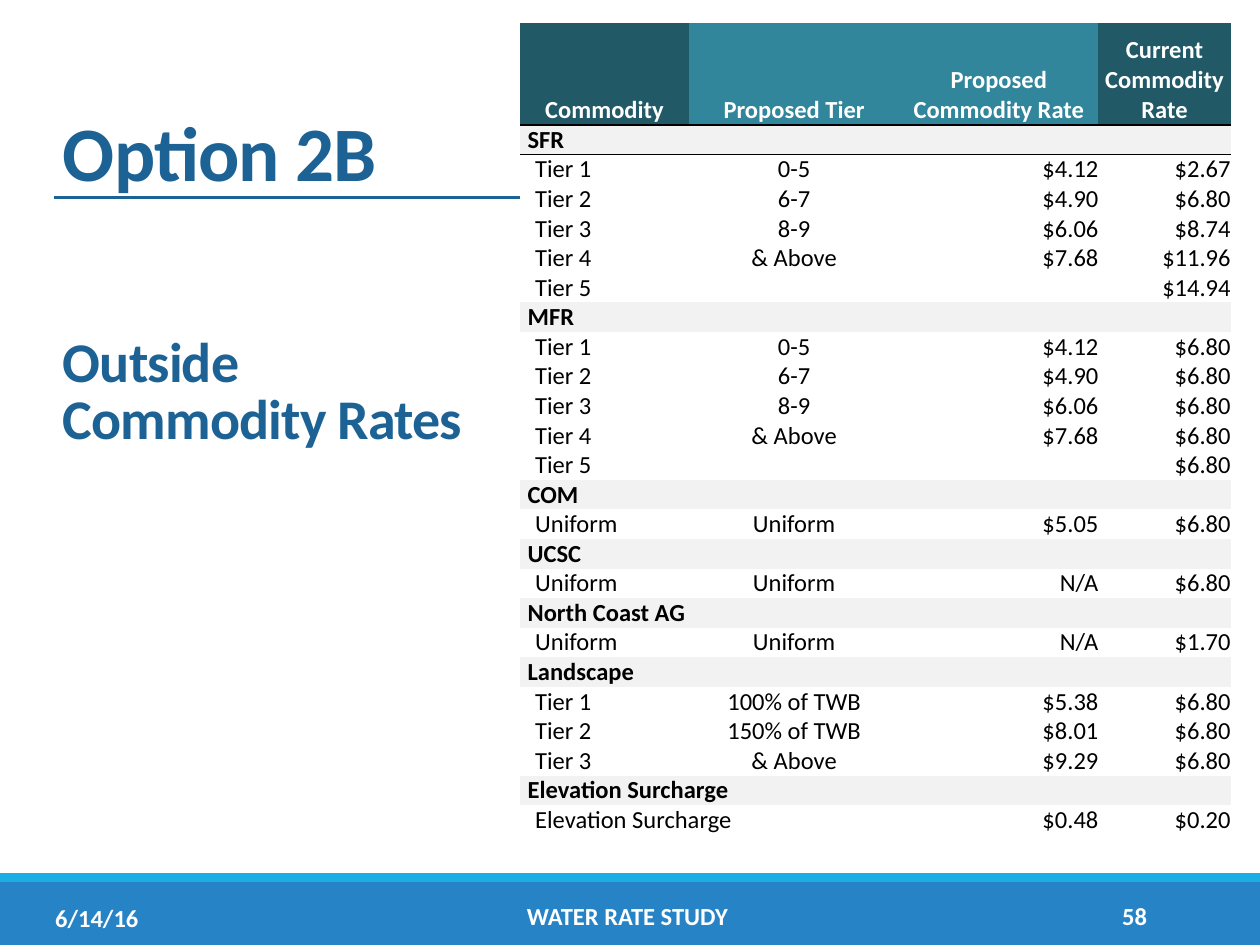
from lxml import etree
from pptx import Presentation
from pptx.dml.color import RGBColor
from pptx.enum.shapes import MSO_CONNECTOR, MSO_SHAPE
from pptx.enum.text import MSO_ANCHOR, PP_ALIGN
from pptx.oxml.ns import qn
from pptx.util import Pt

LEFT, MID, RIGHT = PP_ALIGN.LEFT, PP_ALIGN.CENTER, PP_ALIGN.RIGHT
LOW, CENTER = MSO_ANCHOR.BOTTOM, MSO_ANCHOR.MIDDLE
RECT, LINE = MSO_SHAPE.RECTANGLE, MSO_CONNECTOR.STRAIGHT
PLAIN = "{2D5ABB26-0587-4C30-8999-92F81FD0307C}"

COLORS = {
    "navy": "1D6294", "blue": "2683C6", "sky": "1CADE4",
    "deep": "215967", "teal": "31869B", "gray": "F2F2F2",
    "white": "FFFFFF", "black": "000000",
}
BARS = [(504, 36, "blue"), (499, 5, "sky")]
TITLE = [("Option 2B", 44, 0), ("Outside Commodity Rates", 32, 80)]
FOOTER = [
    ("6/14/16", 24.5, 509.8, 80, LEFT),
    ("WATER RATE STUDY", 104.5, 508.6, 508, MID),
    ("58", 612.5, 508.6, 50, RIGHT),
]
HEAD = [
    ("Commodity", "deep"), ("Proposed Tier", "teal"),
    ("Proposed Commodity Rate", "teal"), ("Current Commodity Rate", "deep"),
]
GROUPS = [
    ("SFR", [
        ("Tier 1", "0-5", "$4.12", "$2.67"),
        ("Tier 2", "6-7", "$4.90", "$6.80"),
        ("Tier 3", "8-9", "$6.06", "$8.74"),
        ("Tier 4", "& Above", "$7.68", "$11.96"),
        ("Tier 5", "", "", "$14.94"),
    ]),
    ("MFR", [
        ("Tier 1", "0-5", "$4.12", "$6.80"),
        ("Tier 2", "6-7", "$4.90", "$6.80"),
        ("Tier 3", "8-9", "$6.06", "$6.80"),
        ("Tier 4", "& Above", "$7.68", "$6.80"),
        ("Tier 5", "", "", "$6.80"),
    ]),
    ("COM", [("Uniform", "Uniform", "$5.05", "$6.80")]),
    ("UCSC", [("Uniform", "Uniform", "N/A", "$6.80")]),
    ("North Coast AG", [("Uniform", "Uniform", "N/A", "$1.70")]),
    ("Landscape", [
        ("Tier 1", "100% of TWB", "$5.38", "$6.80"),
        ("Tier 2", "150% of TWB", "$8.01", "$6.80"),
        ("Tier 3", "& Above", "$9.29", "$6.80"),
    ]),
    ("Elevation Surcharge", [("Elevation Surcharge", "", "$0.48", "$0.20")]),
]
MERGED = {"North Coast AG", "Elevation Surcharge"}
WIDTHS = [96.5, 120.2, 113.8, 75.6]
ALIGNS = [LEFT, MID, RIGHT, RIGHT]
TOP, ROW = 58.3, 16.92


def rgb(name):
    return RGBColor.from_string(COLORS[name])


def paint(item, name):
    item.fill.solid()
    item.fill.fore_color.rgb = rgb(name)


def assign(item, values):
    for key, value in values.items():
        setattr(item, key, value)


def write(para, text, color, size=14, bold=True):
    run = para.add_run()
    run.text = text
    assign(run.font, {"name": "Calibri", "size": Pt(size), "bold": bold})
    run.font.color.rgb = rgb(color)
    return run


def add_box(slide, area, anchor):
    frame = slide.shapes.add_textbox(*map(Pt, area)).text_frame
    assign(frame, {"word_wrap": True, "vertical_anchor": anchor})
    return frame


def add_base(slide):
    for top, height, color in BARS:
        bar = slide.shapes.add_shape(RECT, 0, Pt(top), Pt(720), Pt(height))
        bar.shadow.inherit = False
        paint(bar, color)
        bar.line.fill.background()
    rule = slide.shapes.add_connector(LINE, Pt(31), Pt(113), Pt(688), Pt(113))
    rule.line.color.rgb = rgb("navy")
    rule.line.width = Pt(1.5)
    etree.SubElement(rule._element.spPr, qn("a:effectLst"))


def add_title(slide):
    frame = add_box(slide, (28.8, 28.8, 246.2, 232.6), LOW)
    for i, (text, size, gap) in enumerate(TITLE):
        para = frame.add_paragraph() if i else frame.paragraphs[0]
        assign(para, {"line_spacing": 0.85, "space_before": Pt(gap)})
        run = write(para, text, "navy", size)
        run.font._element.set("spc", "-50")


def add_footer(slide):
    for text, left, top, width, align in FOOTER:
        para = add_box(slide, (left, top, width, 28.8), CENTER).paragraphs[0]
        para.alignment = align
        write(para, text, "white")


def add_edge(cell, side):
    edge = etree.Element(qn("a:" + side), w="12700")
    fill = etree.SubElement(edge, qn("a:solidFill"))
    etree.SubElement(fill, qn("a:srgbClr"), val=COLORS["black"])
    cell._tc.get_or_add_tcPr().insert(0, edge)


def fill_cell(cell, text, back, color, align, bold, inset):
    assign(cell, {
        "margin_left": Pt(inset), "margin_right": 0, "margin_top": 0,
        "margin_bottom": 0, "vertical_anchor": LOW,
    })
    paint(cell, back)
    para = cell.text_frame.paragraphs[0]
    para.alignment = align
    if text:
        write(para, text, color, bold=bold)
    else:
        etree.SubElement(para._p, qn("a:endParaRPr"), sz="1400")


def add_rates(slide):
    rows = []
    for name, tiers in GROUPS:
        rows.append(((name, "", "", ""), True))
        rows += [(tier, False) for tier in tiers]
    high = TOP + ROW * len(rows)
    area = map(Pt, (297.2, 13.2, sum(WIDTHS), high))
    table = slide.shapes.add_table(len(rows) + 1, len(WIDTHS), *area).table
    assign(table, {"first_row": False, "horz_banding": False})
    table._tbl.tblPr.find(qn("a:tableStyleId")).text = PLAIN
    for col, width in zip(table.columns, WIDTHS):
        col.width = Pt(width)
    for i, row in enumerate(table.rows):
        row.height = Pt(ROW if i else TOP)
    for c, (text, back) in enumerate(HEAD):
        fill_cell(table.cell(0, c), text, back, "white", MID, True, 0)
        add_edge(table.cell(0, c), "lnB")
        add_edge(table.cell(1, c), "lnT")
    for r, (texts, group) in enumerate(rows, 1):
        back = "gray" if group else "white"
        pad = 4.3 if group else 8.6
        for c, text in enumerate(texts):
            inset = 0 if c else pad
            fill_cell(table.cell(r, c), text, back, "black", ALIGNS[c],
                      group, inset)
        if texts[0] in MERGED:
            table.cell(r, 0).merge(table.cell(r, 1))


def main():
    deck = Presentation()
    assign(deck, {"slide_width": Pt(720), "slide_height": Pt(540)})
    slide = deck.slides.add_slide(deck.slide_layouts[6])
    add_base(slide)
    add_title(slide)
    add_rates(slide)
    add_footer(slide)
    deck.save("out.pptx")


if __name__ == "__main__":
    main()
